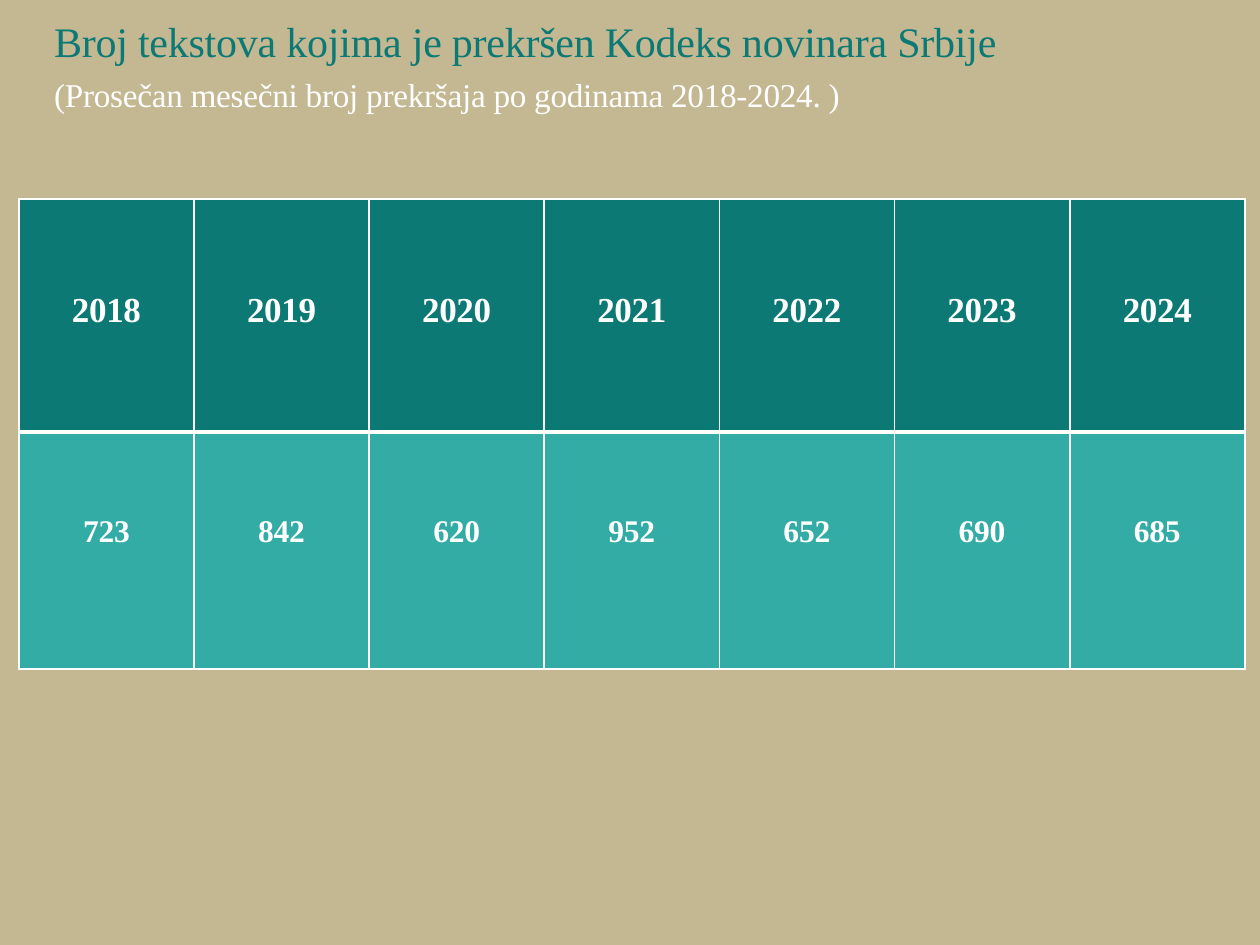
from lxml import etree
from pptx import Presentation
from pptx.dml.color import RGBColor
from pptx.enum.text import MSO_ANCHOR, PP_ALIGN
from pptx.oxml.ns import qn
from pptx.util import Inches, Pt

SAND = RGBColor(0xC4, 0xB8, 0x92)
DARK_TEAL = RGBColor(0x0D, 0x79, 0x74)
LIGHT_TEAL = RGBColor(0x33, 0xAC, 0xA6)
WHITE = RGBColor(0xFF, 0xFF, 0xFF)
LEFT, CENTER = PP_ALIGN.LEFT, PP_ALIGN.CENTER
TOP = MSO_ANCHOR.TOP
FONT = "Times New Roman"

MONTHLY_AVERAGES = [
    ("2018", "723"), ("2019", "842"), ("2020", "620"), ("2021", "952"),
    ("2022", "652"), ("2023", "690"), ("2024", "685"),
]
COLUMN_WIDTH = 1.39
TABLE_LEFT, TABLE_TOP = 0.15, 1.58
ROW_HEIGHTS = (1.85, 1.88)
THIN, THICK = 1, 3


def write_text(paragraph, text, *, size, color=WHITE, bold=False,
               align=LEFT, space_before=0, spacing=0):
    """Fill a paragraph; spacing is the letter spacing in points."""
    paragraph.alignment = align
    paragraph.space_before = Pt(space_before)
    run = paragraph.add_run()
    run.text = text
    run.font.name = FONT
    run.font.size = Pt(size)
    run.font.bold = bold
    run.font.color.rgb = color
    run.font._element.set("spc", str(round(spacing * 100)))


def set_borders(cell, top, bottom):
    """Draw white cell borders, placed ahead of the fill."""
    properties = cell._tc.get_or_add_tcPr()
    sides = (("lnL", THIN), ("lnR", THIN), ("lnT", top), ("lnB", bottom))
    for position, (side, width) in enumerate(sides):
        line = etree.Element(qn(f"a:{side}"), w=str(Pt(width)))
        fill = etree.SubElement(line, qn("a:solidFill"))
        etree.SubElement(fill, qn("a:srgbClr"), val=str(WHITE))
        properties.insert(position, line)


def format_cell(cell, text, *, fill, size, margin_top, top, bottom, spacing):
    cell.margin_left = cell.margin_right = cell.margin_bottom = 0
    cell.margin_top = Inches(margin_top)
    cell.vertical_anchor = TOP
    cell.fill.solid()
    cell.fill.fore_color.rgb = fill
    set_borders(cell, top, bottom)
    write_text(cell.text_frame.paragraphs[0], text, size=size, bold=True,
               align=CENTER, spacing=spacing)


def add_year_table(slide, left, averages):
    """Years in the upper row, monthly averages in the lower row."""
    frame = slide.shapes.add_table(
        2, len(averages), Inches(left), Inches(TABLE_TOP),
        Inches(COLUMN_WIDTH * len(averages)), Inches(sum(ROW_HEIGHTS)))
    table = frame.table
    table.first_row = table.horz_banding = False
    for row, height in zip(table.rows, ROW_HEIGHTS):
        row.height = Inches(height)
    for index, (year, average) in enumerate(averages):
        table.columns[index].width = Inches(COLUMN_WIDTH)
        format_cell(table.cell(0, index), year, fill=DARK_TEAL, size=20,
                    margin_top=0.73, top=THIN, bottom=THICK, spacing=-0.2)
        format_cell(table.cell(1, index), average, fill=LIGHT_TEAL, size=18,
                    margin_top=0.65, top=THICK, bottom=THIN, spacing=-0.1)


def add_heading(slide):
    heading = slide.shapes.add_textbox(
        Inches(0.42), Inches(-0.03), Inches(9.16), Inches(0.9)).text_frame
    heading.word_wrap = True
    heading.vertical_anchor = TOP
    heading.margin_left = Inches(0.01)
    heading.margin_right = heading.margin_bottom = 0
    heading.margin_top = Inches(0.15)
    write_text(heading.paragraphs[0],
               "Broj tekstova kojima je prekršen Kodeks novinara Srbije",
               size=24, color=DARK_TEAL, spacing=-0.15)
    write_text(heading.add_paragraph(),
               "(Prosečan mesečni broj prekršaja po godinama 2018-2024. )",
               size=19, space_before=5.2, spacing=-0.15)


def main():
    presentation = Presentation()
    presentation.slide_width = Inches(10)
    presentation.slide_height = Inches(7.5)
    slide = presentation.slides.add_slide(presentation.slide_layouts[6])

    # Background
    slide.background.fill.solid()
    slide.background.fill.fore_color.rgb = SAND

    # Title and subtitle
    add_heading(slide)

    # Earlier years, then the latest year in a table of its own
    earlier, latest = MONTHLY_AVERAGES[:-1], MONTHLY_AVERAGES[-1:]
    add_year_table(slide, TABLE_LEFT, earlier)
    add_year_table(slide, TABLE_LEFT + COLUMN_WIDTH * len(earlier), latest)

    presentation.save("out.pptx")


if __name__ == "__main__":
    main()
